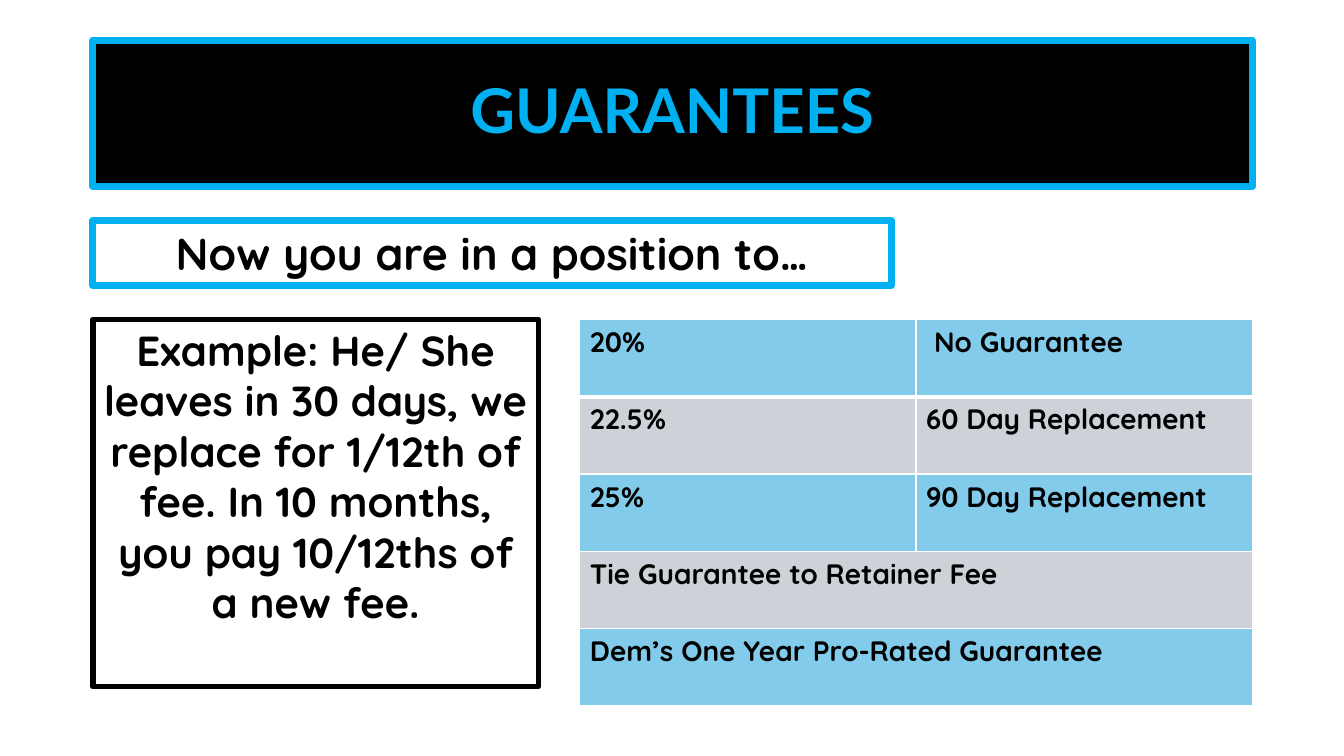
from dataclasses import dataclass

from lxml import etree
from pptx import Presentation
from pptx import util as u
from pptx.dml.color import RGBColor
from pptx.enum import text
from pptx.oxml import ns

BLACK = RGBColor(0x00, 0x00, 0x00)
WHITE = RGBColor(0xFF, 0xFF, 0xFF)
CYAN = RGBColor(0x00, 0xB0, 0xF0)
SKY = RGBColor(0x83, 0xCB, 0xEB)
GREY = RGBColor(0xCC, 0xD2, 0xD8)

LEFT = 0.92
TABLE_LEFT, TABLE_TOP = 5.75, 3.17
TABLE_WIDTH, TABLE_HEIGHT = 6.67, 3.83


@dataclass
class Panel:
    words: str
    top: float
    width: float
    height: float
    size: int
    outline: RGBColor
    weight: float


@dataclass
class Offer:
    label: str
    guarantee: str = ""
    indent: float = 0.1


PANELS = [
    Panel("Now you are in a position to…", 2.19, 7.92, 0.64, 32, CYAN, 5),
    Panel(
        "Example: He/ She leaves in 30 days, we replace for 1/12th of fee. "
        "In 10 months, you pay 10/12ths of a new fee.",
        3.17, 4.42, 3.64, 30, BLACK, 4,
    ),
]

OFFERS = [
    Offer("20%", "No Guarantee", 0.18),
    Offer("22.5%", "60 Day Replacement"),
    Offer("25%", "90 Day Replacement"),
    Offer("Tie Guarantee to Retainer Fee"),
    Offer("Dem’s One Year Pro-Rated Guarantee"),
]


def style_text(frame, size: int, face: str, color: RGBColor) -> None:
    for para in frame.paragraphs:
        for span in para.runs:
            span.font.size = u.Pt(size)
            span.font.name = face
            span.font.bold = True
            span.font.color.rgb = color


def outline_box(box, color: RGBColor, weight: float) -> None:
    box.line.color.rgb = color
    box.line.width = u.Pt(weight)
    etree.SubElement(box.line._get_or_add_ln(), ns.qn("a:round"))


def add_title(page) -> None:
    title = page.shapes.title
    title.left, title.top = u.Inches(LEFT), u.Inches(0.4)
    title.width, title.height = u.Inches(11.5), u.Inches(1.45)
    title.fill.solid()
    title.fill.fore_color.rgb = BLACK
    outline_box(title, CYAN, 5)
    frame = title.text_frame
    frame.text = "GUARANTEES"
    frame.vertical_anchor = text.MSO_ANCHOR.MIDDLE
    frame.paragraphs[0].alignment = text.PP_ALIGN.CENTER
    frame.paragraphs[0].line_spacing = 0.9
    style_text(frame, 44, "Lato", CYAN)


def add_panel(page, panel: Panel) -> None:
    box = page.shapes.add_textbox(
        u.Inches(LEFT), u.Inches(panel.top),
        u.Inches(panel.width), u.Inches(panel.height),
    )
    outline_box(box, panel.outline, panel.weight)
    frame = box.text_frame
    frame.word_wrap = True
    frame.text = panel.words
    frame.paragraphs[0].alignment = text.PP_ALIGN.CENTER
    style_text(frame, panel.size, "Quicksand", BLACK)


def add_borders(cell, bottom: float) -> None:
    properties = cell._tc.get_or_add_tcPr()
    for side, weight in (("L", 1), ("R", 1), ("T", 1), ("B", bottom)):
        line = etree.SubElement(properties, ns.qn(f"a:ln{side}"), w=str(u.Pt(weight)))
        fill = etree.SubElement(line, ns.qn("a:solidFill"))
        etree.SubElement(fill, ns.qn("a:srgbClr"), val=str(WHITE))


def add_offers(page) -> None:
    table = page.shapes.add_table(
        len(OFFERS), 2, u.Inches(TABLE_LEFT), u.Inches(TABLE_TOP),
        u.Inches(TABLE_WIDTH), u.Inches(TABLE_HEIGHT),
    ).table
    for row, offer in enumerate(OFFERS):
        if not offer.guarantee:
            table.cell(row, 0).merge(table.cell(row, 1))
        for column, words in enumerate((offer.label, offer.guarantee)):
            cell = table.cell(row, column)
            add_borders(cell, 3 if row == 0 else 1)
            cell.fill.solid()
            cell.fill.fore_color.rgb = GREY if row % 2 else SKY
            if words:
                cell.text_frame.text = words
                style_text(cell.text_frame, 20, "Quicksand", BLACK)
        table.cell(row, 1).margin_left = u.Inches(offer.indent)


def main() -> None:
    deck = Presentation()
    deck.slide_width, deck.slide_height = u.Inches(13.33), u.Inches(7.5)
    page = deck.slides.add_slide(deck.slide_layouts[5])
    add_title(page)
    for panel in PANELS:
        add_panel(page, panel)
    add_offers(page)
    deck.save("out.pptx")


if __name__ == "__main__":
    main()
